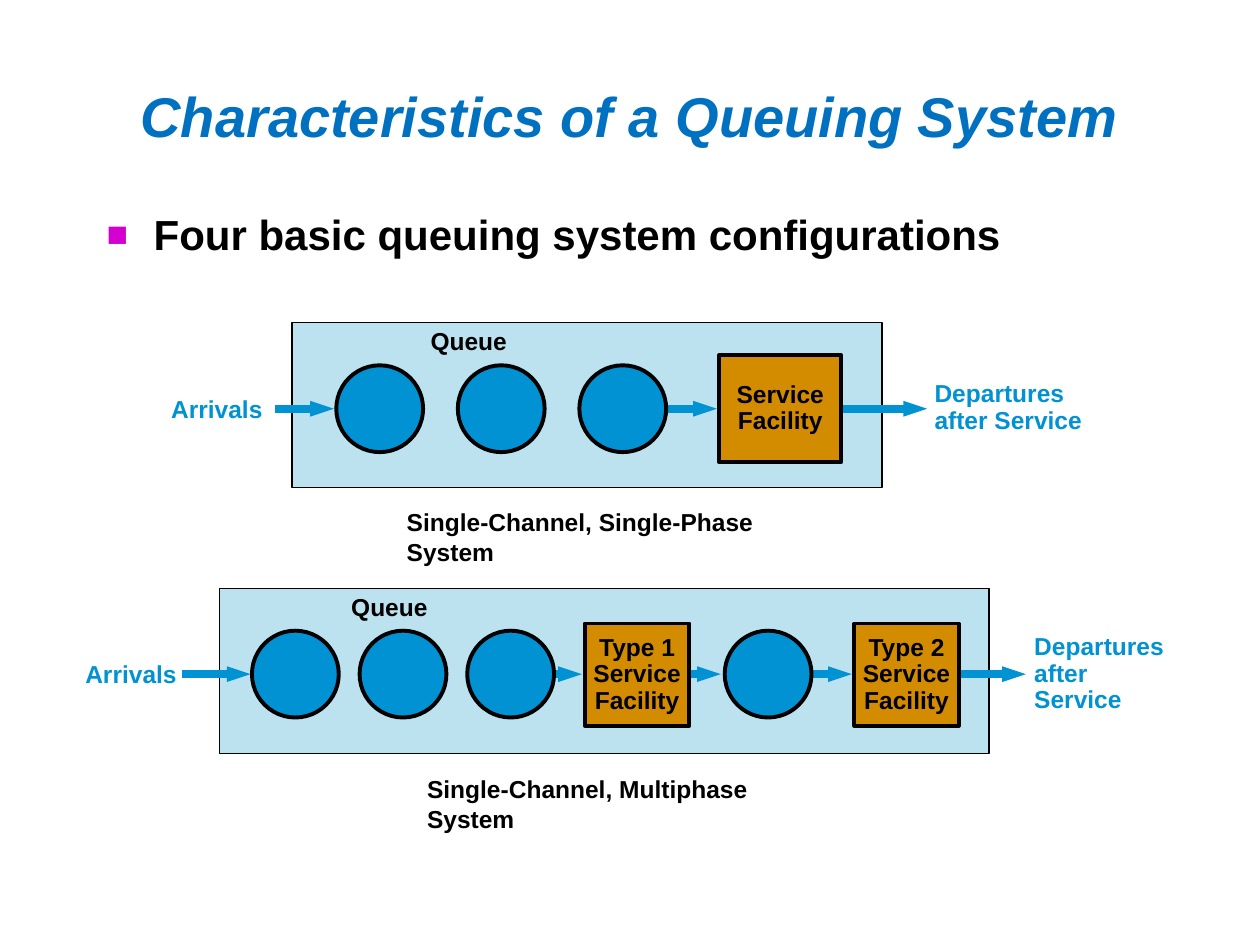
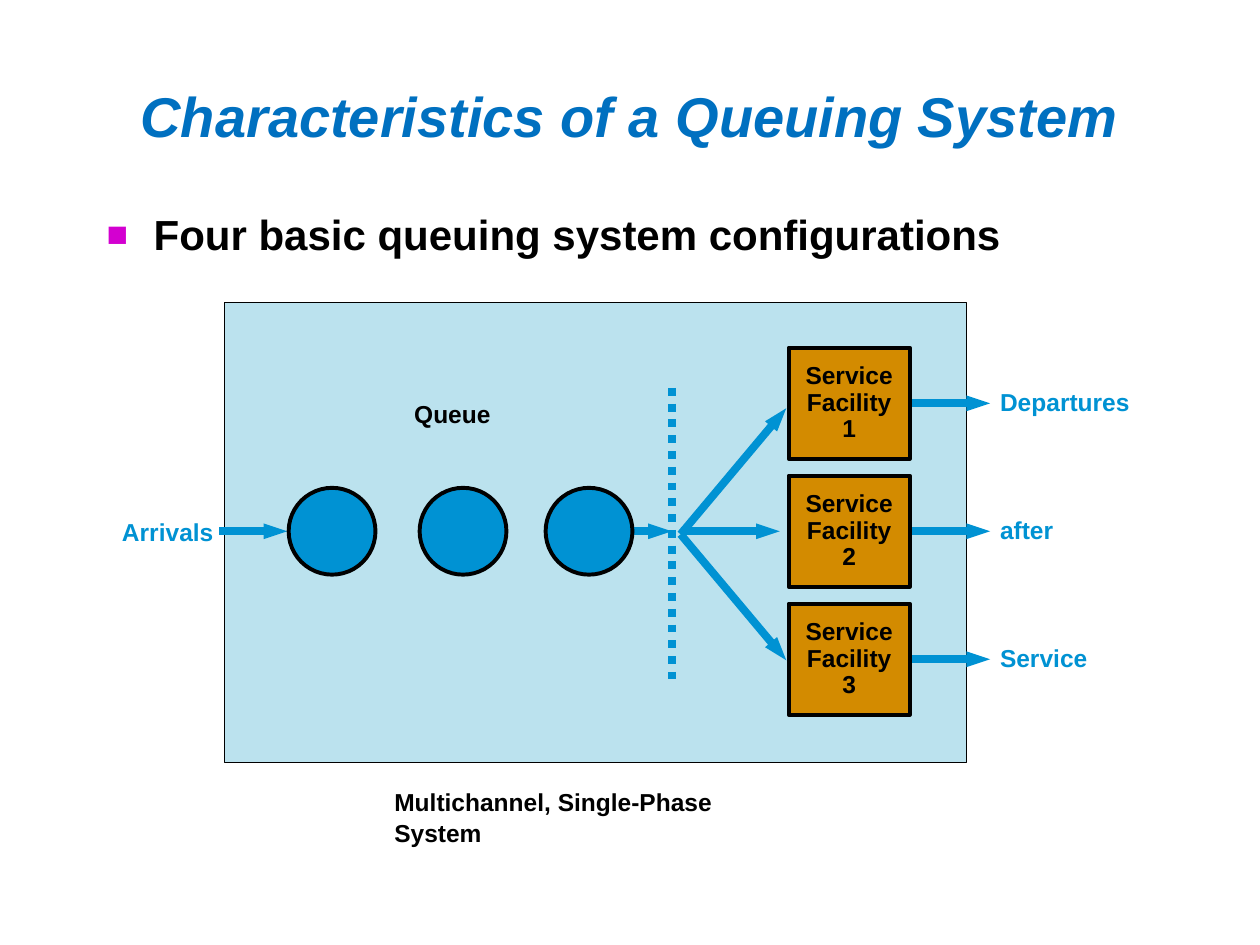
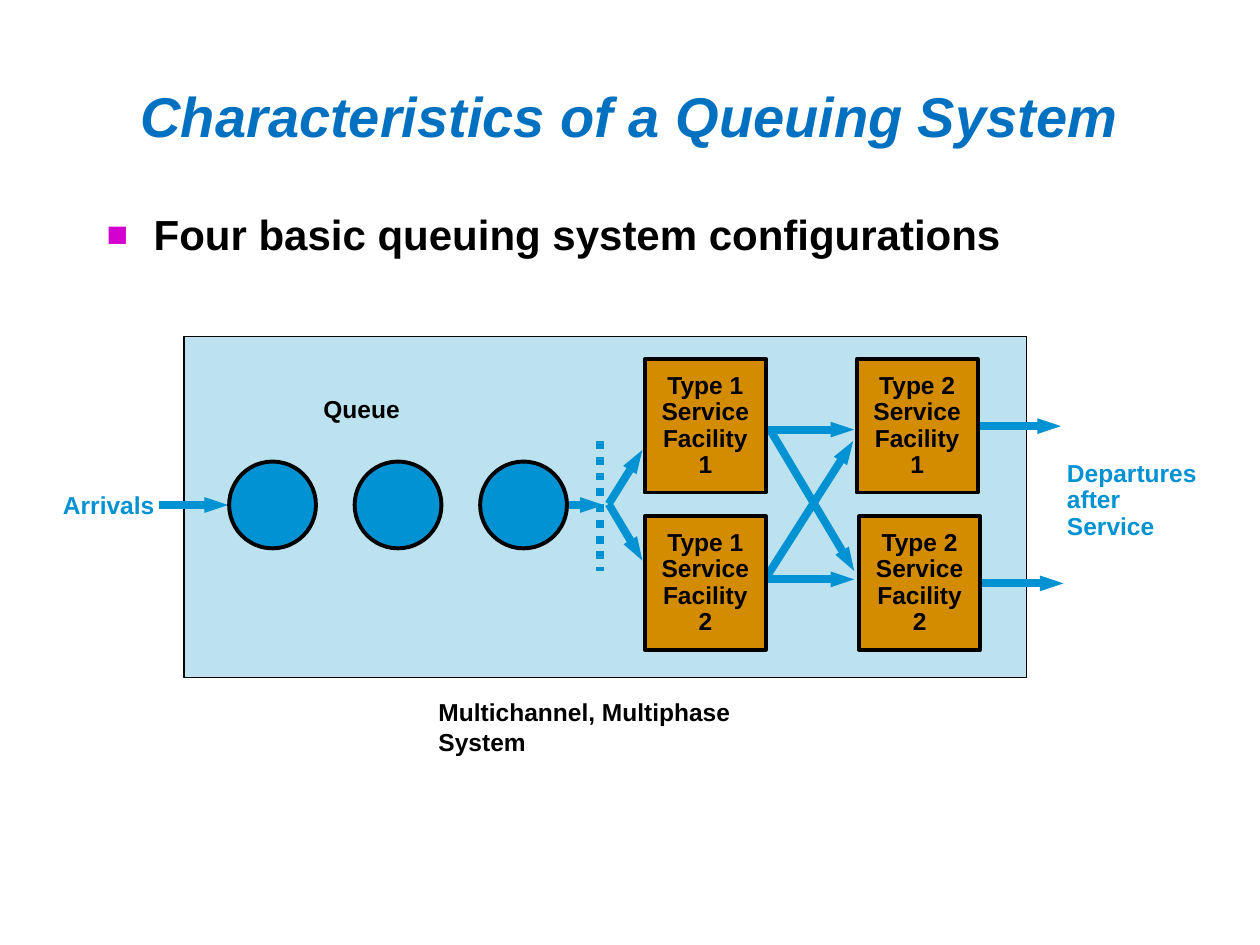
from lxml.etree import SubElement
from pptx import Presentation
from pptx.dml.color import RGBColor
from pptx.enum.dml import MSO_LINE
from pptx.enum.shapes import MSO_CONNECTOR as Link, MSO_SHAPE as Kind
from pptx.enum.text import MSO_ANCHOR as Anchor, PP_ALIGN as Align
from pptx.oxml.ns import qn
from pptx.util import Cm, Pt

FONT = "Arial"
BLACK = RGBColor(0x00, 0x00, 0x00)
TITLE = RGBColor(0x00, 0x70, 0xC0)
BLUE = RGBColor(0x00, 0x92, 0xD3)
PALE = RGBColor(0xBB, 0xE2, 0xEE)
AMBER = RGBColor(0xD3, 0x8B, 0x00)
MARK = "D300D0"

HEAD = "Characteristics of a Queuing System"
LEAD = "Four basic queuing system configurations"
AFTER = "Departures after Service"
DISC = 1.75  # diameter of a waiting customer


def series(start, step, count):
    return [round(start + step * i, 2) for i in range(count)]


# Lengths are in cm. Flows run along the axis from x to x,
# links run from (x, y) to (x, y), split is a dotted line (x, top, bottom).
SINGLE = dict(
    panel=(5.89, 6.5, 11.89, 3.33), axis=8.24,
    discs=series(6.78, 2.45, 3),
    flows=[(5.54, 6.73), (13.26, 14.45), (16.69, 18.69)],
    size=(2.46, 2.16), boxes=[(14.5, 7.16, "Service Facility")],
    arrive=(3.2, 7.82), queue=(8.43, 6.45),
    leave=[(AFTER, 18.59, 7.57, 3.61)],
    name=("Single-Channel, Single-Phase System", 7.95, 10.06),
)
PHASES = dict(
    panel=(4.42, 11.86, 15.52, 3.33), axis=13.59,
    discs=series(5.08, 2.17, 3) + [14.61],
    flows=[(3.66, 5.05), (10.54, 11.73), (13.34, 14.53),
           (15.98, 17.17), (18.95, 20.68)],
    size=(2.11, 2.06),
    boxes=[(x, 12.57, f"Type {n} Service Facility")
           for n, x in enumerate((11.79, 17.22), 1)],
    arrive=(1.47, 13.16), queue=(6.83, 11.81),
    leave=[(AFTER, 20.6, 12.67, 3.28)],
    name=("Single-Channel, Multiphase System", 8.36, 15.44),
)
ROWS = series(8.13, 2.58, 3)
LANES = dict(
    panel=(4.52, 6.1, 14.96, 9.27), axis=10.71,
    discs=[5.82, 8.46, 11.0],
    flows=[(4.42, 5.79), (12.34, 13.54), (13.72, 15.72)],
    links=[(13.72, 10.77, 15.85, y) for y in (8.23, 13.31)]
    + [(18.24, y, 19.96, y) for y in ROWS],
    split=(13.54, 7.82, 13.69),
    size=(2.44, 2.24),
    boxes=[(15.9, y - 1.12, f"Service Facility\v{n}")
           for n, y in enumerate(ROWS, 1)],
    arrive=(2.21, 10.29), queue=(8.1, 7.92),
    leave=[(word, 19.91, y - 0.39, 3.28)
           for word, y in zip(AFTER.split(), ROWS)],
    name=("Multichannel, Single-Phase System", 7.7, 15.72),
)
HIGH, LOW = 8.66, 11.68
GRID = dict(
    panel=(3.71, 6.78, 16.99, 6.88), axis=10.18,
    discs=series(4.62, 2.53, 3),
    flows=[(3.2, 4.6), (10.97, 12.17)],
    links=[(12.27, 10.16, 12.95, y) for y in (9.07, 11.3)]
    + [(15.21, y, 17.22, y) for y in (HIGH, LOW)]
    + [(15.42, LOW, 17.2, 8.89), (15.52, HIGH, 17.22, 11.51),
       (19.66, 8.59, 21.39, 8.59), (19.71, 11.76, 21.44, 11.76)],
    split=(12.09, 8.89, 11.51),
    size=(2.44, 2.69),
    boxes=[(x, y, f"Type {kind} Service Facility\v{n}")
           for n, y, cols in ((1, 7.24, (13, 17.27)), (2, 10.41, (13, 17.32)))
           for kind, x in enumerate(cols, 1)],
    arrive=(1.02, 9.75), queue=(6.27, 7.82),
    leave=[(AFTER, 21.26, 9.17, 3.18)],
    name=("Multichannel, Multiphase System", 8.59, 13.89),
)
SLIDES = [[SINGLE, PHASES], [LANES], [GRID]]


def write(shape, text, size=14, color=BLACK, align=Align.LEFT, gap=0.9):
    frame = shape.text_frame
    frame.word_wrap = True
    frame.text = text
    para = frame.paragraphs[0]
    para.alignment = align
    para.line_spacing = gap
    for run in para.runs:
        font = run.font
        font.name, font.size, font.bold = FONT, Pt(size), True
        font.color.rgb = color
    return para


def note(slide, text, x, y, w, h=0.84, **style):
    box = slide.shapes.add_textbox(Cm(x), Cm(y), Cm(w), Cm(h))
    return box, write(box, text, **style)


def block(slide, kind, x, y, w, h, fill, width=2.25):
    shape = slide.shapes.add_shape(kind, Cm(x), Cm(y), Cm(w), Cm(h))
    shape.shadow.inherit = False
    shape.fill.solid()
    shape.fill.fore_color.rgb = fill
    shape.line.color.rgb = BLACK
    shape.line.width = Pt(width)
    return shape


def stroke(slide, x1, y1, x2, y2):
    line = slide.shapes.add_connector(
        Link.STRAIGHT, Cm(x1), Cm(y1), Cm(x2), Cm(y2))
    line.line.color.rgb = BLUE
    line.line.width = Pt(4.5)
    SubElement(line._element.spPr, qn("a:effectLst"))
    return line.line


def arrow(slide, *ends):
    line = stroke(slide, *ends)
    SubElement(line._get_or_add_ln(), qn("a:tailEnd"),
               type="triangle", w="sm", len="med")


def heading(slide):
    box, para = note(slide, HEAD, 1.9, 1.09, 21.59, 2.62,
                     size=32, color=TITLE, align=Align.CENTER)
    box.text_frame.vertical_anchor = Anchor.MIDDLE
    para.runs[0].font.italic = True

    box, para = note(slide, LEAD, 1.9, 4.19, 21.59, 1.52, size=24)
    props = para._p.get_or_add_pPr()
    props.set("marL", str(Cm(0.95)))
    props.set("indent", str(Cm(-0.95)))
    tint = SubElement(props, qn("a:buClr"))
    SubElement(tint, qn("a:srgbClr"), val=MARK)
    SubElement(props, qn("a:buSzPct"), val="85000")
    SubElement(props, qn("a:buFont"), typeface=FONT)
    SubElement(props, qn("a:buChar"), char="■")


def diagram(slide, plan):
    axis = plan["axis"]
    block(slide, Kind.RECTANGLE, *plan["panel"], PALE, 0.75)
    for start, end in plan["flows"]:
        arrow(slide, start, axis, end, axis)
    for ends in plan.get("links", []):
        arrow(slide, *ends)
    if "split" in plan:
        x, top, low = plan["split"]
        stroke(slide, x, top, x, low).dash_style = MSO_LINE.ROUND_DOT
    for x in plan["discs"]:
        block(slide, Kind.OVAL, x, axis - DISC / 2, DISC, DISC, BLUE)
    for x, y, text in plan["boxes"]:
        box = block(slide, Kind.RECTANGLE, x, y, *plan["size"], AMBER)
        frame = box.text_frame
        frame.margin_left = frame.margin_right = 0
        frame.margin_top = frame.margin_bottom = 0
        frame.vertical_anchor = Anchor.MIDDLE
        write(box, text, align=Align.CENTER)
    note(slide, "Arrivals", *plan["arrive"], 2.5, color=BLUE, gap=1)
    note(slide, "Queue", *plan["queue"], 2.5, gap=1)
    for text, x, y, w in plan["leave"]:
        note(slide, text, x, y, w, color=BLUE)
    note(slide, *plan["name"], 7.87, 1.4, gap=1.05)


def main():
    deck = Presentation()
    deck.slide_width, deck.slide_height = Cm(25.4), Cm(19.05)
    for plans in SLIDES:
        slide = deck.slides.add_slide(deck.slide_layouts[6])
        heading(slide)
        for plan in plans:
            diagram(slide, plan)
    deck.save("out.pptx")


if __name__ == "__main__":
    main()
